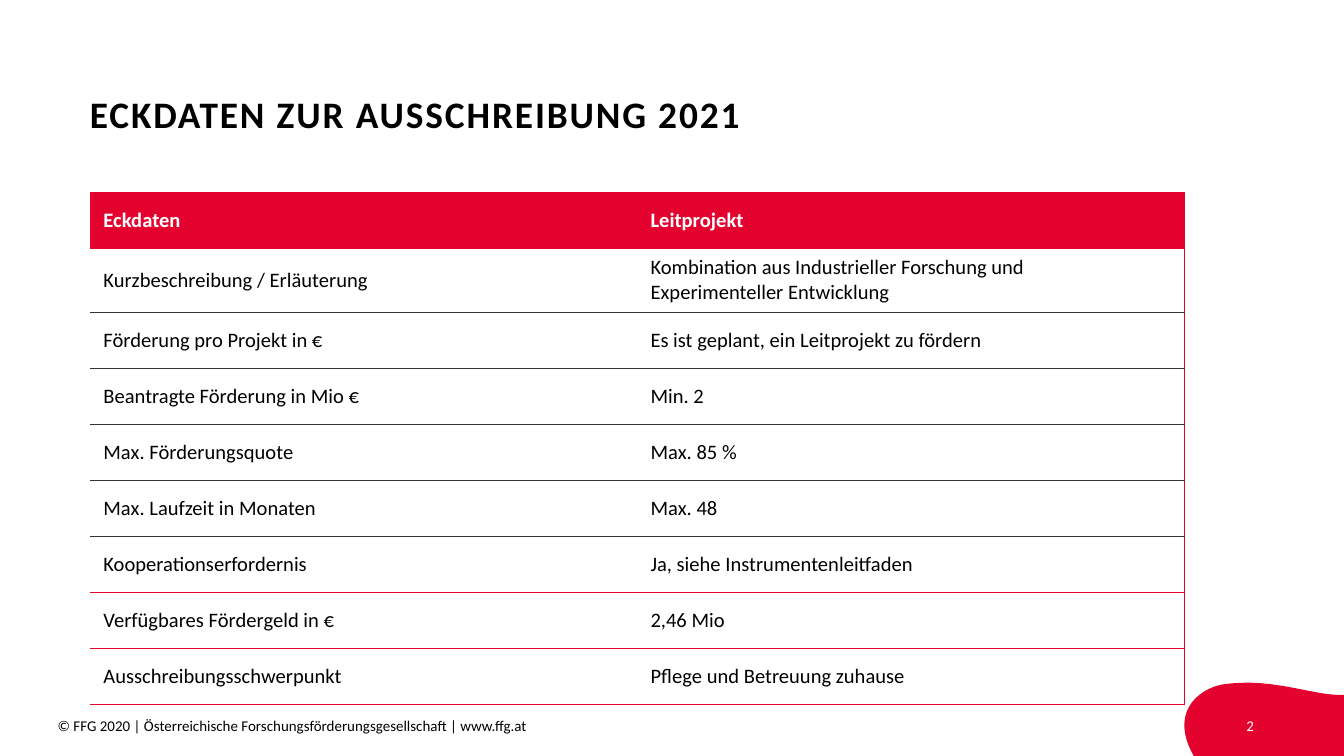
import dataclasses
import pptx
import pptx.dml.color
import pptx.enum.text
import pptx.oxml
import pptx.oxml.ns
import pptx.util

Cm = pptx.util.Cm
Pt = pptx.util.Pt
RGB = pptx.dml.color.RGBColor.from_string
Align = pptx.enum.text.PP_ALIGN
Anchor = pptx.enum.text.MSO_ANCHOR


@dataclasses.dataclass(frozen=True)
class Theme:
    font: str = "Calibri"
    red: str = "E4032E"
    rule: str = "333333"
    ink: str = "000000"
    paper: str = "FFFFFF"
    title_size: float = 20
    table_size: float = 11
    footer_size: float = 8
    line_width: float = 0.5


THEME = Theme()
PLAIN_TABLE_STYLE = "{2D5ABB26-0587-4C30-8999-92F81FD0307C}"
ROWS = [
    ("Eckdaten", "Leitprojekt"),
    ("Kurzbeschreibung / Erläuterung",
     "Kombination aus Industrieller Forschung und\nExperimenteller Entwicklung"),
    ("Förderung pro Projekt in €", "Es ist geplant, ein Leitprojekt zu fördern"),
    ("Beantragte Förderung in Mio €", "Min. 2"),
    ("Max. Förderungsquote", "Max. 85 %"),
    ("Max. Laufzeit in Monaten", "Max. 48"),
    ("Kooperationserfordernis", "Ja, siehe Instrumentenleitfaden"),
    ("Verfügbares Fördergeld in €", "2,46 Mio"),
    ("Ausschreibungsschwerpunkt", "Pflege und Betreuung zuhause"),
]
DARK_RULE_ROWS = range(1, 6)


def write_text(frame, text, size, color=THEME.ink, bold=False,
               align=Align.LEFT, spacing=None, line_spacing=None):
    para = frame.paragraphs[0]
    para.text = text.replace("\n", "\v")
    para.alignment = align
    if line_spacing:
        para.line_spacing = line_spacing
    for span in para.runs:
        span.font.name = THEME.font
        span.font.size = Pt(size)
        span.font.bold = bold
        span.font.color.rgb = RGB(color)
        if spacing:
            span.font._element.set("spc", str(int(spacing * 100)))


def prepare_frame(frame, anchor):
    frame.word_wrap = True
    frame.auto_size = pptx.enum.text.MSO_AUTO_SIZE.NONE
    frame.vertical_anchor = anchor
    frame.margin_left = frame.margin_right = 0
    frame.margin_top = frame.margin_bottom = 0


def add_title(page, left, top, width, height):
    title = page.shapes.title
    title.left, title.top, title.width, title.height = left, top, width, height
    prepare_frame(title.text_frame, Anchor.MIDDLE)
    write_text(title.text_frame, "ECKDATEN ZUR AUSSCHREIBUNG 2021", THEME.title_size,
               bold=True, spacing=1, line_spacing=0.9)


def add_border(cell, side, color):
    """Draw one cell edge; side is L, R, T or B, in that order."""
    cell._tc.get_or_add_tcPr().append(pptx.oxml.parse_xml(
        f'<a:ln{side} {pptx.oxml.ns.nsdecls("a")} w="{Pt(THEME.line_width)}">'
        f'<a:solidFill><a:srgbClr val="{color}"/></a:solidFill></a:ln{side}>'))


def add_key_facts(page, left, top, width, row_height):
    frame = page.shapes.add_table(len(ROWS), 2, left, top, width,
                                  row_height * len(ROWS))
    table = frame.table
    table.first_row = table.horz_banding = False
    style = frame._element.find(".//" + pptx.oxml.ns.qn("a:tableStyleId"))
    style.text = PLAIN_TABLE_STYLE
    rules = [THEME.rule if row in DARK_RULE_ROWS else THEME.red
             for row in range(len(ROWS))]
    for row, texts in enumerate(ROWS):
        table.rows[row].height = row_height
        header = row == 0
        for column, text in enumerate(texts):
            cell = table.cell(row, column)
            if column == 1:
                add_border(cell, "R", THEME.red)
            add_border(cell, "T", THEME.red if header else rules[row - 1])
            add_border(cell, "B", rules[row])
            cell.fill.solid()
            cell.fill.fore_color.rgb = RGB(THEME.red if header else THEME.paper)
            cell.vertical_anchor = Anchor.MIDDLE
            write_text(cell.text_frame, text, THEME.table_size, bold=header,
                       color=THEME.paper if header else THEME.ink)


def curve_points(start, first, second, end, steps=24):
    """Points along a cubic Bézier curve, without its start."""
    for step in range(1, steps + 1):
        t = step / steps
        u = 1 - t
        yield tuple(u**3 * a + 3 * u * u * t * b + 3 * u * t * t * c + t**3 * d
                    for a, b, c, d in zip(start, first, second, end))


def add_corner_blob(page, left, top, width, height):
    def at(x, y):
        return left + x * width, top + y * height

    crest, edge, foot = at(0.27, 0.02), at(1, 0.17), at(0.06, 1)
    points = [
        *curve_points(crest, at(0.57, -0.06), at(0.82, 0.19), edge),
        at(1, 1), foot,
        *curve_points(foot, at(-0.11, 0.35), at(0.13, 0.04), crest),
    ]
    builder = page.shapes.build_freeform(int(crest[0]), int(crest[1]))
    builder.add_line_segments([(int(x), int(y)) for x, y in points], close=True)
    blob = builder.convert_to_shape()
    blob.shadow.inherit = False
    blob.fill.solid()
    blob.fill.fore_color.rgb = RGB(THEME.red)
    blob.line.fill.background()


def add_footer_text(page, left, top, width, height, text, **text_format):
    box = page.shapes.add_textbox(left, top, width, height)
    prepare_frame(box.text_frame, Anchor.TOP)
    write_text(box.text_frame, text, THEME.footer_size, **text_format)


def build_facts_page(deck):
    page = deck.slides.add_slide(deck.slide_layouts[5])
    margin, table_top = Cm(1.7), Cm(3.63)
    blob_left, footer_top, footer_height = Cm(22.38), Cm(13.54), Cm(0.48)
    blob_top = Cm(12.9)
    add_corner_blob(page, blob_left, blob_top, deck.slide_width - blob_left,
                    deck.slide_height - blob_top)
    add_title(page, margin, Cm(0.76), Cm(19), Cm(2.87))
    add_key_facts(page, margin, table_top, Cm(20.68), Cm(1.06))
    add_footer_text(
        page, Cm(1.09), footer_top, Cm(12.09), footer_height,
        "© FFG 2020 | Österreichische Forschungsförderungsgesellschaft | www.ffg.at")
    add_footer_text(page, blob_left, footer_top, Cm(1.32), footer_height, "2",
                    color=THEME.paper, align=Align.RIGHT)


def main():
    deck = pptx.Presentation()
    deck.slide_width, deck.slide_height = Cm(25.4), Cm(14.29)
    build_facts_page(deck)
    deck.save("out.pptx")


if __name__ == "__main__":
    main()
